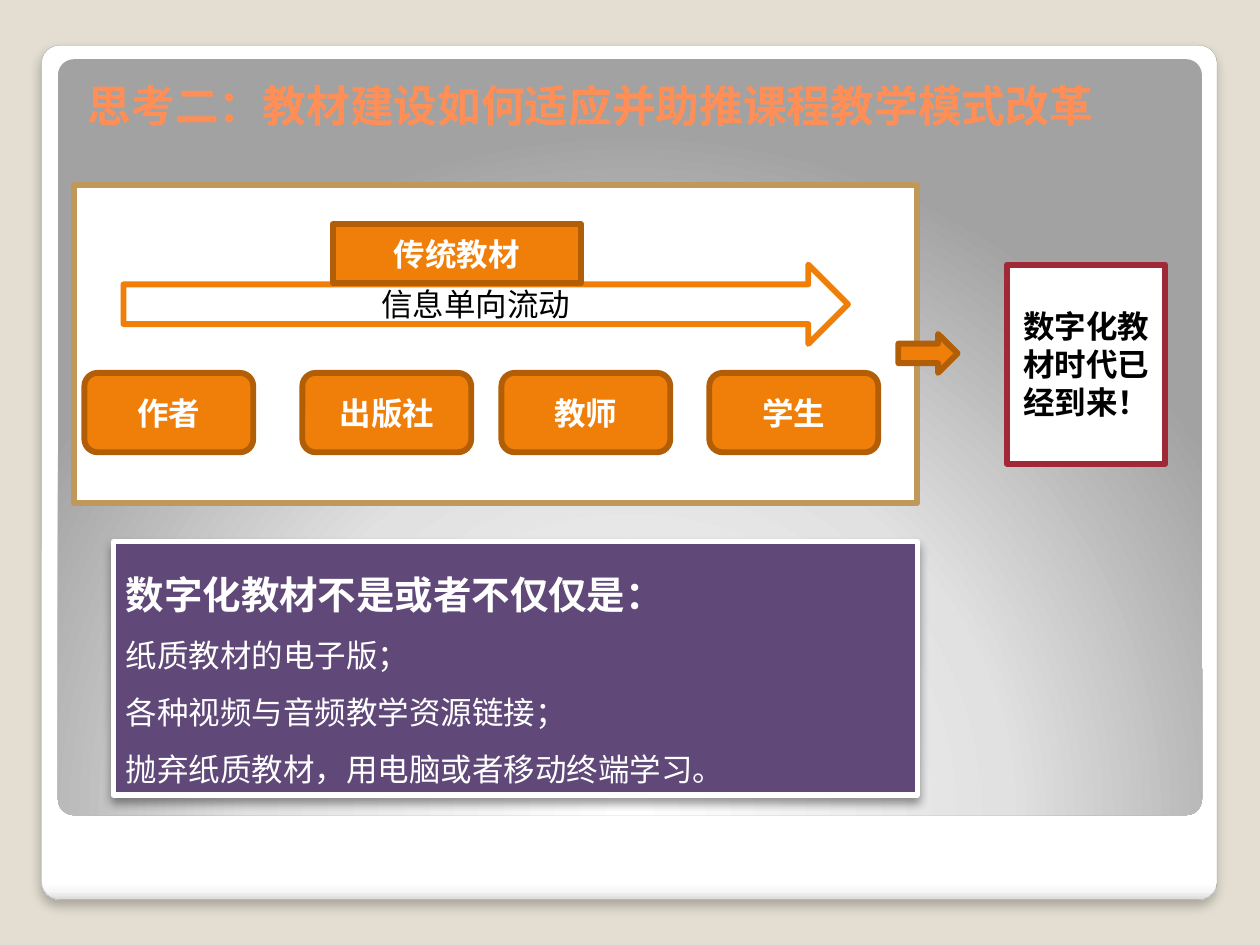
from pptx import Presentation
from pptx.dml.color import RGBColor
from pptx.enum.shapes import MSO_SHAPE as SHAPE
from pptx.enum.text import MSO_ANCHOR as ANCHOR, PP_ALIGN as ALIGN
from pptx.oxml import parse_xml
from pptx.oxml.ns import nsdecls
from pptx.util import Inches, Pt

FONT = "DejaVu Sans"
ORANGE, BROWN, WHITE, BLACK = "F07F09", "B25E07", "FFFFFF", "000000"
BORDER = 3.35


def color(hex_code):
    return RGBColor.from_string(hex_code)


def add_box(s, kind, box, fill=None, line=None, width=BORDER, radius=None):
    sp = s.shapes.add_shape(kind, *[Inches(v) for v in box])
    sp.shadow.inherit = False
    if fill:
        sp.fill.solid()
        sp.fill.fore_color.rgb = color(fill)
    if line:
        sp.line.color.rgb = color(line)
        sp.line.width = Pt(width)
    else:
        sp.line.fill.background()
    if radius is not None:
        sp.adjustments[0] = radius
    return sp


def write(sp, lines, rgb, align=ALIGN.CENTER, anchor=ANCHOR.MIDDLE, spacing=None):
    """Fill a shape with (text, size, bold) lines."""
    tf = sp.text_frame
    tf.word_wrap = True
    tf.vertical_anchor = anchor
    for i, (text, size, bold) in enumerate(lines):
        p = tf.add_paragraph() if i else tf.paragraphs[0]
        p.text = text
        p.alignment = align
        p.line_spacing = spacing
        p.font.name, p.font.size, p.font.bold = FONT, Pt(size), bold
        p.font.color.rgb = color(rgb)


def set_gradient(sp, stops, direction):
    """Replace the fill by (percent, colour) stops and a direction element."""
    stop_xml = "".join(f'<a:gs pos="{pos * 1000}"><a:srgbClr val="{rgb}"/></a:gs>'
                       for pos, rgb in stops)
    gradient = parse_xml(f'<a:gradFill {nsdecls("a")} rotWithShape="1">'
                         f'<a:gsLst>{stop_xml}</a:gsLst>{direction}</a:gradFill>')
    sp.fill.background()
    props = sp._element.spPr
    old = props.find("{*}noFill")
    props.replace(old, gradient)


def set_shadow(sp, alpha, blur, distance):
    """Cast a soft black shadow straight down; blur and distance in points."""
    effects = sp._element.spPr.find("{*}effectLst")
    effects.append(parse_xml(
        f'<a:outerShdw {nsdecls("a")} blurRad="{Pt(blur)}" dist="{Pt(distance)}" '
        f'dir="5400000" algn="t" rotWithShape="0"><a:srgbClr val="{BLACK}">'
        f'<a:alpha val="{alpha * 1000}"/></a:srgbClr></a:outerShdw>'))


def add_backdrop(s):
    s.background.fill.solid()
    s.background.fill.fore_color.rgb = color("E3DED1")
    card = add_box(s, SHAPE.ROUNDED_RECTANGLE, (0.33, 0.36, 9.33, 6.78),
                   line="A4A4A4", width=0.16, radius=0.021)
    set_gradient(card, [(0, WHITE), (98, WHITE), (99, "F7F7F7"), (100, "DADADA")],
                 '<a:lin ang="5400000" scaled="0"/>')
    set_shadow(card, 25, 6, 4)
    panel = add_box(s, SHAPE.ROUNDED_RECTANGLE, (0.46, 0.47, 9.08, 6), radius=0.021)
    set_gradient(panel, [(0, WHITE), (55, "E1E1E1"), (100, "A2A2A2")],
                 '<a:path path="circle"><a:fillToRect l="50000" t="175000" '
                 'r="50000" b="-75000"/></a:path>')


def add_title(s, text):
    tb = s.shapes.add_textbox(Inches(0.6), Inches(0.5), Inches(8.8), Inches(0.66))
    write(tb, [(text, 25, True)], "FF8F56", ALIGN.LEFT)


def add_flow(s):
    """Traditional textbooks: one-way flow from author to student."""
    add_box(s, SHAPE.RECTANGLE, (0.59, 1.47, 6.69, 2.52), WHITE, "C19859")
    for left, role in zip((0.67, 2.4, 3.98, 5.63), ("作者", "出版社", "教师", "学生")):
        sp = add_box(s, SHAPE.ROUNDED_RECTANGLE, (left, 2.96, 1.34, 0.63), ORANGE, BROWN)
        write(sp, [(role, 18, True)], WHITE)
    arrow = add_box(s, SHAPE.RIGHT_ARROW, (0.98, 2.1, 5.75, 0.63), WHITE, ORANGE)
    write(arrow, [("信息单向流动", 18, False)], BLACK)
    label = add_box(s, SHAPE.RECTANGLE, (2.64, 1.78, 1.97, 0.47), ORANGE, BROWN)
    write(label, [("传统教材", 18, True)], WHITE)


def add_outcome(s):
    add_box(s, SHAPE.RIGHT_ARROW, (7.13, 2.65, 0.47, 0.31), ORANGE, BROWN)
    sp = add_box(s, SHAPE.RECTANGLE, (7.99, 2.1, 1.26, 1.58), WHITE, "9F2936")
    write(sp, [("数字化教材时代已经到来！", 18, True)], BLACK)


def add_notice(s):
    sp = add_box(s, SHAPE.RECTANGLE, (0.9, 4.3, 6.38, 2.01), "604878", WHITE, 3)
    set_shadow(sp, 40, 5.2, 3)
    write(sp, [("数字化教材不是或者不仅仅是：", 22, True),
               ("纸质教材的电子版；", 18, False),
               ("各种视频与音频教学资源链接；", 18, False),
               ("抛弃纸质教材，用电脑或者移动终端学习。", 18, False)],
          WHITE, ALIGN.LEFT, ANCHOR.TOP, 1.5)


def main():
    prs = Presentation()
    prs.slide_width, prs.slide_height = Inches(10), Inches(7.5)
    s = prs.slides.add_slide(prs.slide_layouts[6])
    add_backdrop(s)
    add_title(s, "思考二：教材建设如何适应并助推课程教学模式改革")
    add_flow(s)
    add_outcome(s)
    add_notice(s)
    prs.save("out.pptx")


if __name__ == "__main__":
    main()
